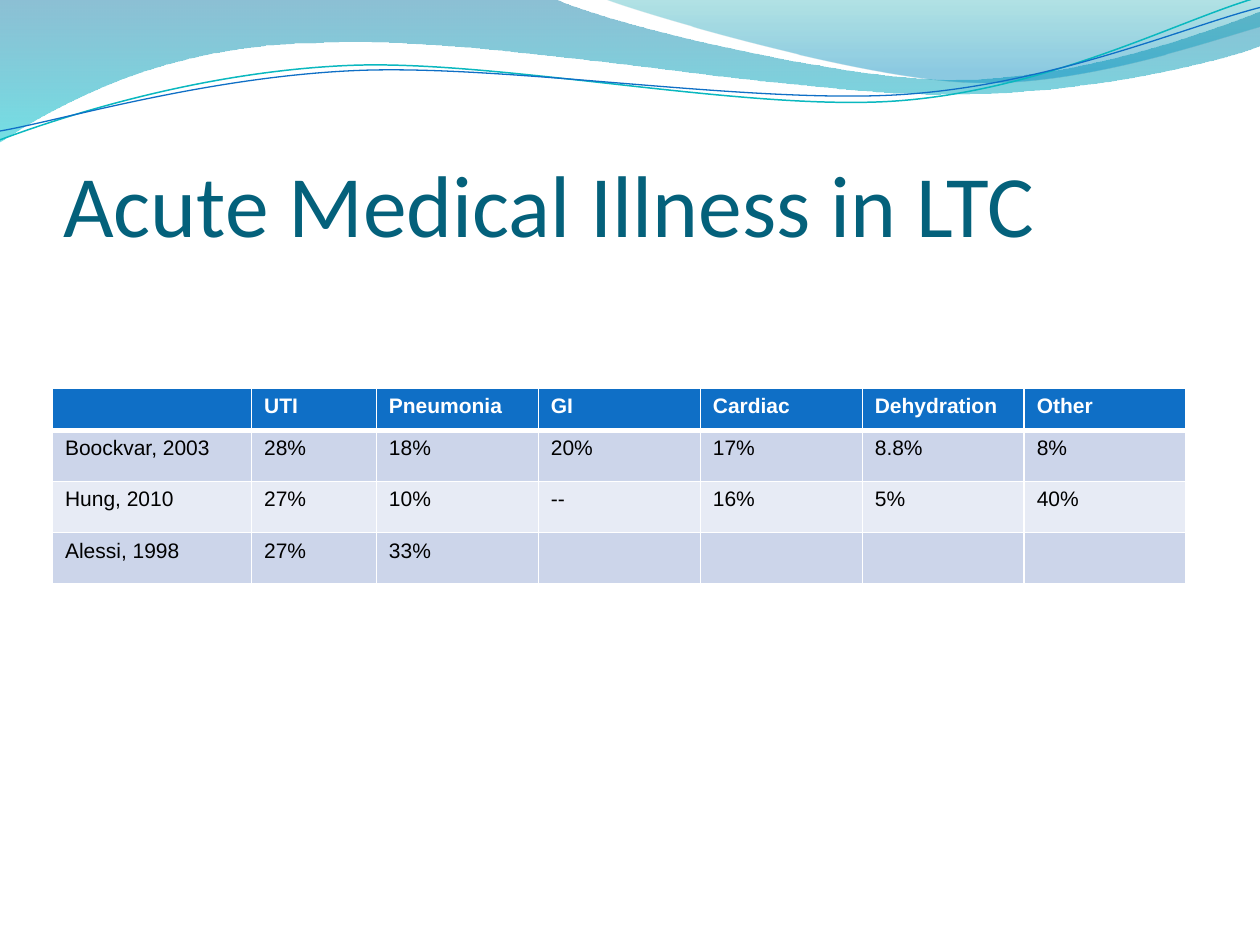
from math import cos, radians, sin

from lxml import etree
from pptx import Presentation
from pptx.dml.color import RGBColor
from pptx.enum.text import MSO_ANCHOR
from pptx.oxml.ns import qn
from pptx.util import Pt

BOTTOM = MSO_ANCHOR.BOTTOM
COLORS = {
    "title": "04617B", "header": "0F6FC6", "white": "FFFFFF", "black": "000000",
    "band_dark": "CCD5EA", "band_light": "E7EBF5",
    "deep": "0074A1", "aqua": "00C6CF", "teal": "00A1A9", "sky": "008BBF",
    "teal_line": "0AB8BF", "blue_line": "0F6FC6",
}
TITLE = "Acute Medical Illness in LTC"
ROWS = [
    ["", "UTI", "Pneumonia", "GI", "Cardiac", "Dehydration", "Other"],
    ["Boockvar, 2003", "28%", "18%", "20%", "17%", "8.8%", "8%"],
    ["Hung, 2010", "27%", "10%", "--", "16%", "5%", "40%"],
    ["Alessi, 1998", "27%", "33%", "", "", "", ""],
]
COLUMN_WIDTHS = [113.8, 71.3] + [92.57] * 5
ROW_HEIGHTS = [24] + [29.2] * 3

BANDS = [
    ([[(0, -0.7)], [(316.8, -0.7)],
      [(342.7, 12.2), (478.1, 45.4), (545.8, 45.4)],
      [(614.2, 45.4), (689.8, 18.7), (720, 6.5)], [(720.7, 25.9)],
      [(707.8, 31.7), (626.4, 54.7), (537.1, 54)],
      [(447.8, 54), (275, 20.2), (185, 24.5)],
      [(92.9, 25.2), (33.1, 59.8), (-0.7, 81.4)]],
     [(0, "deep", 45), (1, "aqua", 55)]),
    ([[(344.9, -0.7)],
      [(366.5, 7.9), (491, 44.6), (553.7, 46.8)],
      [(616.3, 49.7), (691.9, 23), (720, 15.1)], [(720, 0)]],
     [(0, "teal", 30), (0.8, "sky", 45)]),
]
WAVES = [
    ([[(0, 79.9)],
      [(34.6, 67), (113.8, 41), (199.4, 37.4)],
      [(284.4, 33.8), (427, 64.1), (513.4, 57.6)],
      [(599.8, 51.1), (675.4, 10.8), (718.6, -1.4)]], (359.3, 41.4), "teal_line", 0.85),
    ([[(0, 74.9)],
      [(33.8, 69.1), (118.1, 43.9), (203.8, 40.3)],
      [(290.2, 36.7), (429.8, 59.8), (516.2, 54)],
      [(601.9, 48.2), (677.5, 15.1), (720, 4.3)]], (359.6, 42.5), "blue_line", 0.75),
]
WAVE_TILT = 2.7


def color(name):
    return RGBColor.from_string(COLORS[name])


def turn(point, center, degrees):
    angle = radians(degrees)
    x, y = point[0] - center[0], point[1] - center[1]
    return (center[0] + x * cos(angle) - y * sin(angle),
            center[1] + x * sin(angle) + y * cos(angle))


def add_outline(slide, segments, close):
    points = [(Pt(x), Pt(y)) for segment in segments for x, y in segment]
    builder = slide.shapes.build_freeform(*points[0])
    builder.add_line_segments(points[1:], close=close)
    shape = builder.convert_to_shape()
    shape.shadow.inherit = False
    path = next(shape._element.iter(qn("a:path")))
    lines = iter(path.findall(qn("a:lnTo")))
    for segment in segments[1:]:
        group = [next(lines) for _ in segment]
        if len(group) == 3:
            curve = etree.Element(qn("a:cubicBezTo"))
            group[0].addprevious(curve)
            for line in group:
                curve.append(line[0])
                path.remove(line)
    return shape


def add_band(slide, segments, stops):
    shape = add_outline(slide, segments, True)
    shape.line.fill.background()
    shape.fill.gradient()
    shape.fill.gradient_angle = 270
    for stop, (position, name, _) in zip(shape.fill.gradient_stops, stops):
        stop.position = position
        stop.color.rgb = color(name)
    for element, (_, _, opacity) in zip(shape._element.spPr.iter(qn("a:srgbClr")), stops):
        etree.SubElement(element, qn("a:alpha")).set("val", str(opacity * 1000))


def add_wave(slide, segments, center, name, width):
    level = [[turn(point, center, WAVE_TILT) for point in segment] for segment in segments]
    shape = add_outline(slide, level, False)
    shape.rotation = 360 - WAVE_TILT
    shape.fill.background()
    shape.line.color.rgb = color(name)
    shape.line.width = Pt(width)


def add_run(paragraph, text, font, size, name, bold=False):
    run = paragraph.add_run()
    run.text = text
    run.font.name = font
    run.font.size = Pt(size)
    run.font.bold = bold
    run.font.color.rgb = color(name)


def add_title(slide):
    frame = slide.shapes.add_textbox(Pt(36.2), Pt(55.8), Pt(648), Pt(90)).text_frame
    frame.word_wrap = True
    frame.vertical_anchor = BOTTOM
    frame.margin_left = frame.margin_right = frame.margin_bottom = 0
    frame.margin_top = Pt(3.6)
    add_run(frame.paragraphs[0], TITLE, "Calibri", 50, "title")


def set_borders(cell, widths):
    properties = cell._tc.get_or_add_tcPr()
    for index, (side, width) in enumerate(widths.items()):
        line = etree.Element(qn(f"a:{side}"), w=str(Pt(width)))
        fill = etree.SubElement(line, qn("a:solidFill"))
        etree.SubElement(fill, qn("a:srgbClr")).set("val", COLORS["white"])
        properties.insert(index, line)


def add_illness_table(slide):
    table = slide.shapes.add_table(len(ROWS), len(COLUMN_WIDTHS), Pt(30), Pt(222),
                                   Pt(sum(COLUMN_WIDTHS)), Pt(sum(ROW_HEIGHTS))).table
    for column, width in zip(table.columns, COLUMN_WIDTHS):
        column.width = Pt(width)
    for row, height in zip(table.rows, ROW_HEIGHTS):
        row.height = Pt(height)
    for row_index, values in enumerate(ROWS):
        header = row_index == 0
        band = "header" if header else "band_dark" if row_index % 2 else "band_light"
        for column_index, text in enumerate(values):
            cell = table.cell(row_index, column_index)
            cell.fill.solid()
            cell.fill.fore_color.rgb = color(band)
            set_borders(cell, {"lnL": 1, "lnR": 1, "lnT": 3 if row_index == 1 else 1,
                               "lnB": 3 if header else 1})
            paragraph = cell.text_frame.paragraphs[0]
            if text:
                add_run(paragraph, text, "Arial", 12, "white" if header else "black", header)
            else:
                etree.SubElement(paragraph._p, qn("a:endParaRPr")).set("sz", "1200")


def main():
    presentation = Presentation()
    presentation.slide_width, presentation.slide_height = Pt(720), Pt(540)
    slide = presentation.slides.add_slide(presentation.slide_layouts[6])
    for band in BANDS:
        add_band(slide, *band)
    for wave in WAVES:
        add_wave(slide, *wave)
    add_title(slide)
    add_illness_table(slide)
    presentation.save("out.pptx")


if __name__ == "__main__":
    main()
